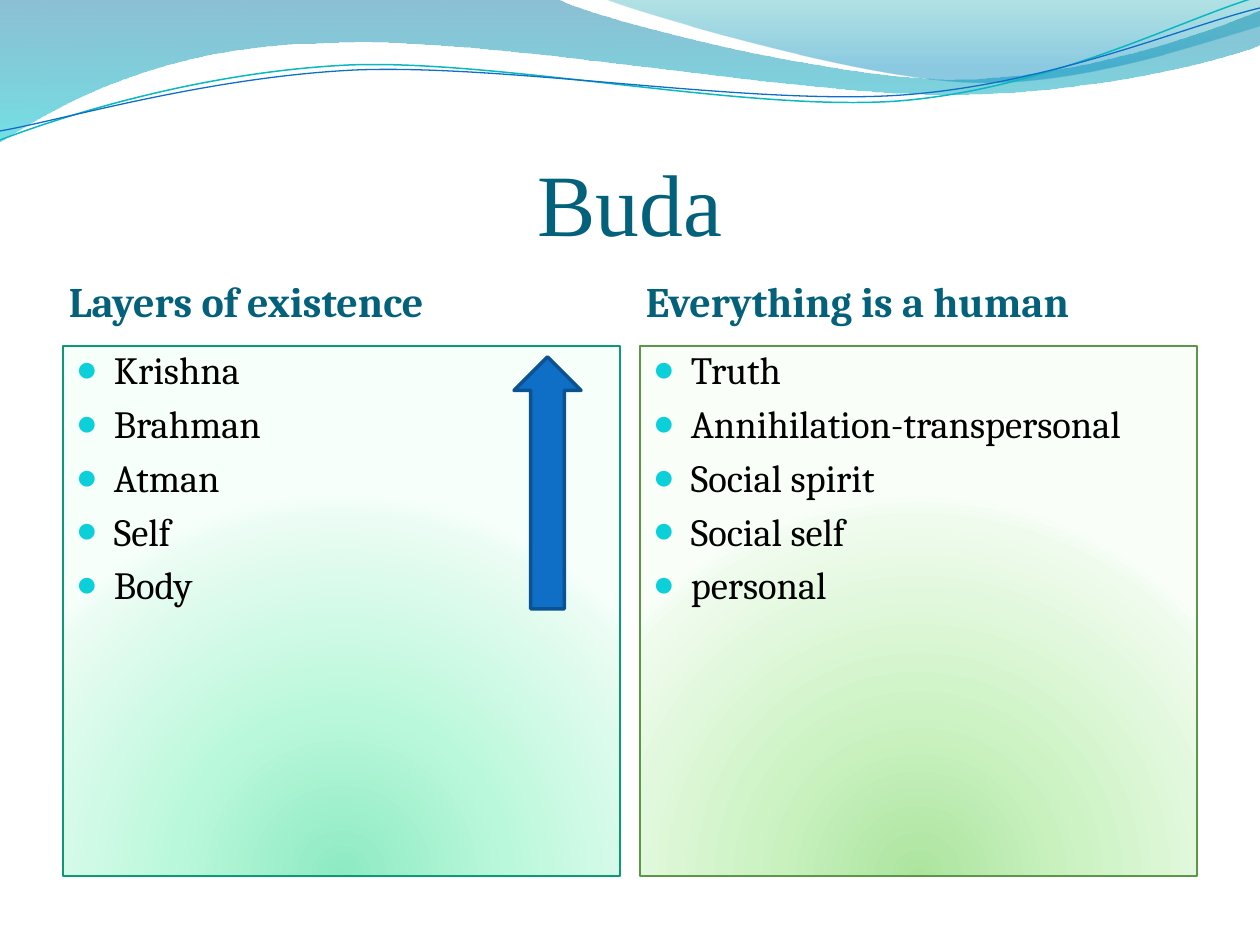
from pptx import Presentation
from pptx.dml.color import RGBColor
from pptx.enum.shapes import MSO_SHAPE
from pptx.enum.text import MSO_ANCHOR, PP_ALIGN
from pptx.oxml import parse_xml
from pptx.oxml.ns import nsdecls
from pptx.util import Emu, Pt

UP, RECT = MSO_SHAPE.UP_ARROW, MSO_SHAPE.RECTANGLE
TOP, MID, LOW = MSO_ANCHOR.TOP, MSO_ANCHOR.MIDDLE, MSO_ANCHOR.BOTTOM
LEFT, MAIN = PP_ALIGN.LEFT, PP_ALIGN.CENTER

BLACK = RGBColor(0x00, 0x00, 0x00)
NAVY = RGBColor(0x04, 0x61, 0x7B)
CYAN = RGBColor(0x0B, 0xD0, 0xD9)
AQUA = RGBColor(0x0A, 0xB8, 0xBF)
BLUE = RGBColor(0x0F, 0x6F, 0xC6)
EDGE = RGBColor(0x0B, 0x52, 0x92)
TEAL = RGBColor(0x0A, 0x9B, 0x74)
MOSS = RGBColor(0x5B, 0x97, 0x47)

TITLE = "Buda"
PANELS = [
    ("Layers of existence", ["Krishna", "Brahman", "Atman", "Self", "Body"], TEAL,
     ["8DEAC2", "BAF8DB", "EAFCF3", "F7FFFB"]),
    ("Everything is a human",
     ["Truth", "Annihilation-transpersonal", "Social spirit", "Social self", "personal"],
     MOSS, ["ACE49F", "CDF3C4", "EFFBED", "F9FFF8"]),
]
STOPS = [0, 43, 93, 100]
GLOW = '<a:path path="circle"><a:fillToRect l="50000" t="130000" r="50000" b="-30000"/></a:path>'
DOWN = '<a:lin ang="5400000" scaled="0"/>'

WAVES = [
    ([(0, 0), (557, -1), (600, 21, 837, 79, 955, 79), (1075, 79, 1207, 33, 1260, 11),
      (1261, 45), (1239, 55, 1096, 96, 940, 94), (784, 94, 481, 35, 324, 43),
      (163, 45, 58, 105, -1, 142)],
     [(0, "0074A1", 45), (100, "00C6CF", 55)]),
    ([(604, -1), (641, 14, 859, 78, 969, 82), (1079, 87, 1211, 40, 1260, 26), (1260, 0)],
     [(0, "00A1A9", 30), (80, "008BBF", 45)]),
]
LINES = [
    ([(0, 140), (60, 117, 199, 72, 349, 65), (498, 59, 747, 112, 898, 101),
      (1050, 89, 1182, 19, 1257, -3)], AQUA, 0.85),
    ([(0, 131), (59, 121, 207, 77, 356, 70), (508, 64, 752, 106, 903, 95),
      (1053, 84, 1185, 26, 1260, 8)], BLUE, 0.75),
]

WIDE, HIGH = 1260, 945
EDGE_X, GAP = 63, 20
COL = (WIDE - 2 * EDGE_X - GAP) // 2
HEAD_Y, HEAD_H = 255, 91
BOX_Y, BOX_H = 346, 530
INDENT = 38
SCALE = 914400 / 126


def px(n):
    return Emu(round(n * SCALE))


def shade(shape, stops, kind):
    marks = "".join(
        f'<a:gs pos="{pos * 1000}"><a:srgbClr val="{hue}"><a:alpha val="{alpha * 1000}"/>'
        "</a:srgbClr></a:gs>" for pos, hue, alpha in stops)
    shape.fill.background()
    old = shape._element.spPr.find("{*}noFill")
    new = parse_xml(f'<a:gradFill {nsdecls("a")} rotWithShape="1">'
                    f"<a:gsLst>{marks}</a:gsLst>{kind}</a:gradFill>")
    old.getparent().replace(old, new)


def stroke(shape, color, width):
    shape.line.color.rgb = color
    shape.line.width = Pt(width)


def trace(shapes, path, close):
    ends = [(px(part[-2]), px(part[-1])) for part in path]
    maker = shapes.build_freeform(*ends[0])
    maker.add_line_segments(ends[1:], close=close)
    shape = maker.convert_to_shape()
    shape.shadow.inherit = False
    sides = shape._element.spPr.findall(".//{*}lnTo")
    for part, side in zip(path[1:], sides):
        if len(part) == 6:
            dots = "".join(f'<a:pt x="{px(x) - shape.left}" y="{px(y) - shape.top}"/>'
                           for x, y in zip(part[::2], part[1::2]))
            curve = parse_xml(f'<a:cubicBezTo {nsdecls("a")}>{dots}</a:cubicBezTo>')
            side.getparent().replace(side, curve)
    return shape


def bullet(para):
    props = para._p.get_or_add_pPr()
    props.set("marL", str(px(INDENT)))
    props.set("indent", str(-px(INDENT)))
    for tag in (f'buClr {nsdecls("a")}><a:srgbClr val="{CYAN}"/></a:buClr',
                f'buSzPct {nsdecls("a")} val="95000"/',
                f'buFont {nsdecls("a")} typeface="Times New Roman"/',
                f'buChar {nsdecls("a")} char="●"/'):
        props.append(parse_xml(f"<a:{tag}>"))


def write(shape, rows, size, color, font="Cambria", bold=False, align=LEFT,
          anchor=TOP, pads=(0, 0, 0, 0), dots=False):
    frame = shape.text_frame
    frame.word_wrap = True
    frame.vertical_anchor = anchor
    (frame.margin_left, frame.margin_top,
     frame.margin_right, frame.margin_bottom) = map(px, pads)
    for i, row in enumerate(rows):
        para = frame.add_paragraph() if i else frame.paragraphs[0]
        para.alignment = align
        if dots:
            para.space_before = Pt(4.4)
            bullet(para)
        run = para.add_run()
        run.text = row
        run.font.size = Pt(size)
        run.font.name = font
        run.font.bold = bold
        run.font.color.rgb = color


def main():
    deck = Presentation()
    deck.slide_width, deck.slide_height = px(WIDE), px(HIGH)
    shapes = deck.slides.add_slide(deck.slide_layouts[6]).shapes

    for path, stops in WAVES:
        wave = trace(shapes, path, True)
        shade(wave, stops, DOWN)
        wave.line.fill.background()
    for path, color, width in LINES:
        line = trace(shapes, path, False)
        line.fill.background()
        stroke(line, color, width)

    title = shapes.add_textbox(px(EDGE_X), px(97), px(WIDE - 2 * EDGE_X), px(157))
    write(title, [TITLE], 50, NAVY, font="Times New Roman", align=MAIN,
          anchor=LOW, pads=(0, 6, 0, 0))

    for i, (head, rows, color, hues) in enumerate(PANELS):
        x = EDGE_X + i * (COL + GAP)
        label = shapes.add_textbox(px(x), px(HEAD_Y), px(COL), px(HEAD_H))
        write(label, [head], 24, NAVY, bold=True, anchor=MID, pads=(6, 0, 6, 0))
        box = shapes.add_shape(RECT, px(x), px(BOX_Y), px(COL), px(BOX_H))
        box.shadow.inherit = False
        shade(box, [(pos, hue, 100) for pos, hue in zip(STOPS, hues)], GLOW)
        stroke(box, color, 0.75)
        write(box, rows, 22, BLACK, pads=(13, 0, 13, 6), dots=True)

    arrow = shapes.add_shape(UP, px(514), px(357), px(67), px(252))
    arrow.shadow.inherit = False
    arrow.fill.solid()
    arrow.fill.fore_color.rgb = BLUE
    stroke(arrow, EDGE, 2)

    deck.save("out.pptx")


if __name__ == "__main__":
    main()
